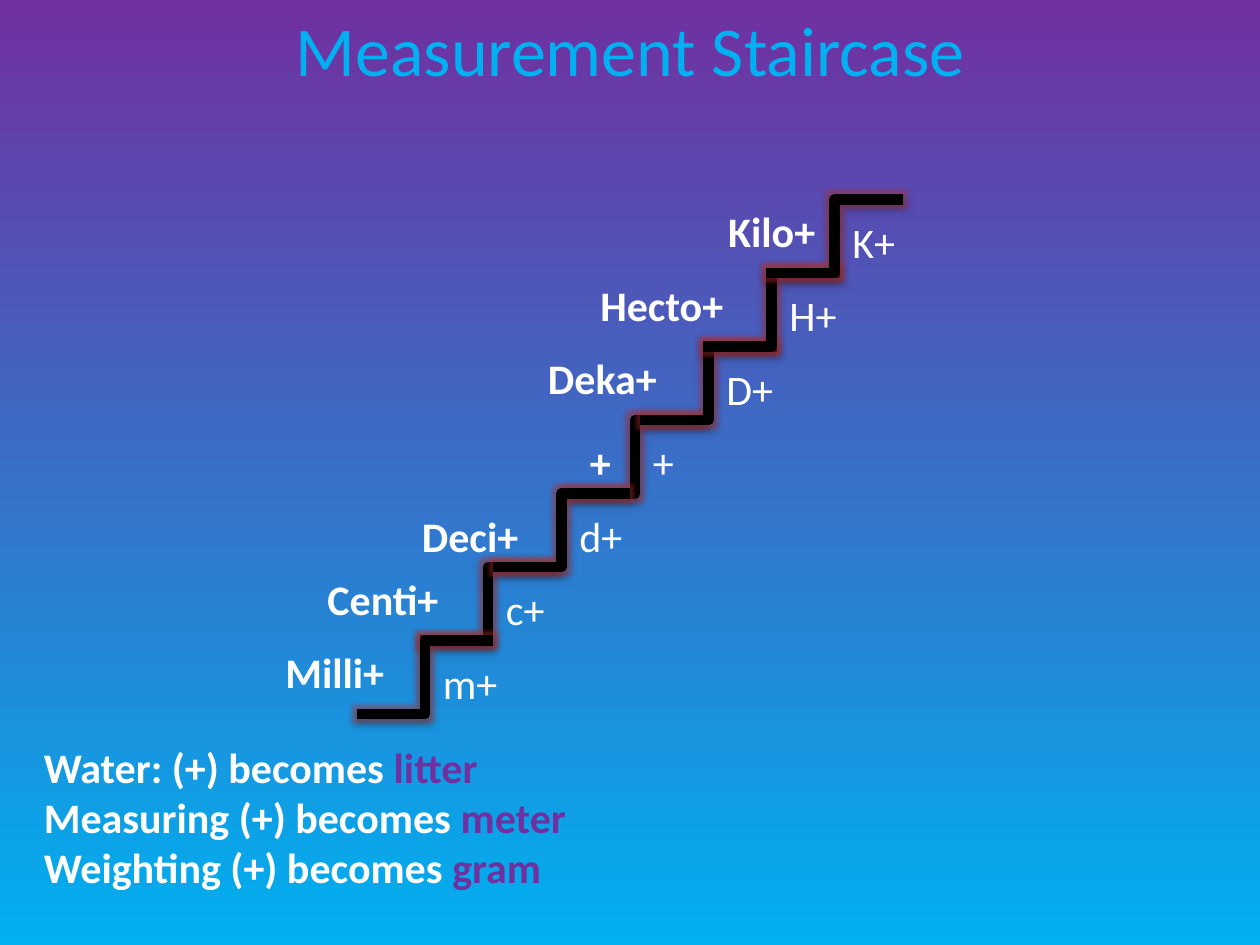
from lxml.etree import SubElement
from pptx import Presentation
from pptx.dml.color import RGBColor
from pptx.enum.shapes import MSO_CONNECTOR
from pptx.enum.text import PP_ALIGN
from pptx.oxml.ns import qn
from pptx.util import Pt

TITLE = "Measurement Staircase"
# name, its left, its width, its drop below the step top, symbol, left of step
STEPS = [
    ("Milli+", 156, 78, 0, "m+", 204),
    ("Centi+", 180, 90, 0, "c+", 240),
    ("Deci+", 234, 78, 6, "d+", 282),
    ("+", 330, 24, 6, "+", 324),
    ("Deka+", 306, 90, 0, "D+", 366),
    ("Hecto+", 336, 102, 0, "H+", 402),
    ("Kilo+", 396, 90, 0, "K+", 438),
]
DRAW_ORDER = [1, 3, 2, 4, 5, 0, 6]
UNITS = [
    ("Water: (+) becomes ", "litter"),
    ("Measuring (+) becomes ", "meter"),
    ("Weighting (+) becomes ", "gram"),
]
FLOOR, RISE, RUN = 408, 42, 78
WHITE, PURPLE, SKY, BLACK, RED = "FFFFFF", "7030A0", "00B0F0", "000000", "C0302D"


def rgb(value):
    return RGBColor.from_string(value)


def style(r, color, size=24, bold=False):
    r.font.name = "Calibri"
    r.font.size = Pt(size)
    r.font.bold = bold
    r.font.color.rgb = rgb(color)


def add_box(s, x, y, w, h):
    tf = s.shapes.add_textbox(Pt(x), Pt(y), Pt(w), Pt(h)).text_frame
    tf.word_wrap = True
    return tf


def add_label(s, text, x, y, w, bold=False):
    p = add_box(s, x, y, w, 36).paragraphs[0]
    p.text = text
    style(p.runs[0], WHITE, bold=bold)


def add_effect(effects, tag, color, alpha, **attrs):
    effect = SubElement(effects, qn(tag), {k: str(v) for k, v in attrs.items()})
    clr = SubElement(effect, qn("a:srgbClr"), val=color)
    SubElement(clr, qn("a:alpha"), val=str(alpha * 1000))


def add_step(s, x, bottom):
    line = s.shapes.add_connector(
        MSO_CONNECTOR.ELBOW, Pt(x), Pt(bottom), Pt(x + RUN), Pt(bottom - RISE))
    line.line.color.rgb = rgb(BLACK)
    line.line.width = Pt(6)
    effects = SubElement(line._element.spPr, qn("a:effectLst"))
    add_effect(effects, "a:glow", RED, 40, rad=Pt(5))
    add_effect(effects, "a:outerShdw", BLACK, 35, blurRad=Pt(3.1),
               dist=Pt(1.8), dir=5400000, rotWithShape=0)


prs = Presentation()
prs.slide_width, prs.slide_height = Pt(720), Pt(540)
s = prs.slides.add_slide(prs.slide_layouts[5])

fill = s.background.fill
fill.gradient()
fill.gradient_angle = 270
for stop, color in zip(fill.gradient_stops, (PURPLE, SKY)):
    stop.color.rgb = rgb(color)

title = s.shapes.title
title.left, title.top, title.width, title.height = Pt(0), Pt(0), Pt(720), Pt(55.4)
title.text_frame.text = TITLE
style(title.text_frame.paragraphs[0].runs[0], SKY, 40)
title.text_frame.paragraphs[0].alignment = PP_ALIGN.CENTER

for i in DRAW_ORDER:
    add_step(s, STEPS[i][-1], FLOOR - i * RISE)

for i, (name, name_x, name_w, drop, symbol, x) in enumerate(STEPS):
    top = FLOOR - (i + 1) * RISE
    add_label(s, name, name_x, top + drop, name_w, bold=True)
    add_label(s, symbol, x + 42, top + 6, 54)
    if name == "Kilo+":
        s.shapes[-2].text_frame.paragraphs[0].alignment = PP_ALIGN.CENTER

tf = add_box(s, 18, 420, 684, 124)
for i, (lead, unit) in enumerate(UNITS):
    p = tf.add_paragraph() if i else tf.paragraphs[0]
    for text, color in ((lead, WHITE), (unit, PURPLE)):
        r = p.add_run()
        r.text = text
        style(r, color, bold=True)

prs.save("out.pptx")
